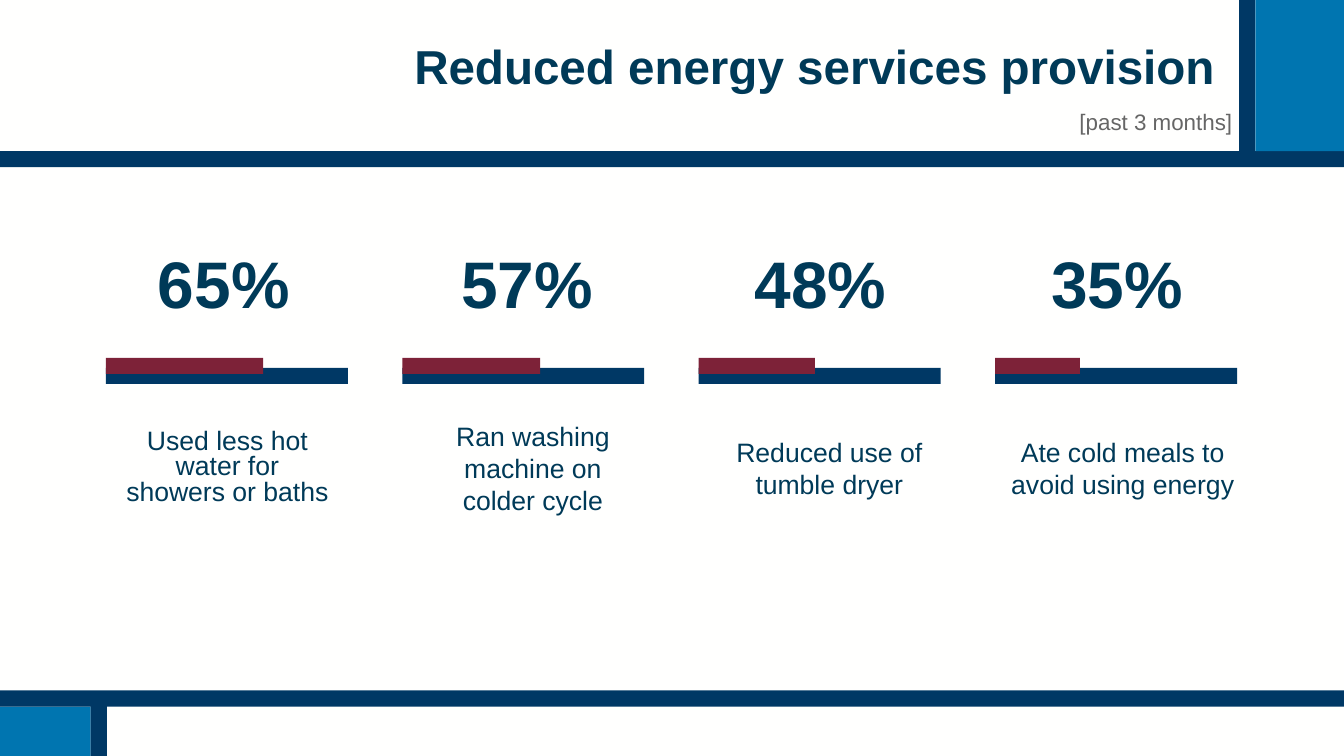
from pptx import Presentation
from pptx.dml.color import RGBColor
from pptx.enum.shapes import MSO_SHAPE
from pptx.enum.text import MSO_ANCHOR, PP_ALIGN
from pptx.util import Inches, Pt

WIDTH, HEIGHT = 13.33, 7.5
NAVY, BLUE, RED = "003865", "0075B0", "7D2238"
INK, GREY, PAPER = "003A58", "666666", "FFFFFE"
RULE = 0.16  # thickness of every band and bar


def color(value):
    return RGBColor.from_string(value)


class SlideBuilder:
    font = "Arial"

    def __init__(self, s):
        self.s = s

    def background(self, fill):
        bg = self.s.background.fill
        bg.solid()
        bg.fore_color.rgb = color(fill)

    def rect(self, x, y, w, h, fill):
        sp = self.s.shapes.add_shape(
            MSO_SHAPE.RECTANGLE, Inches(x), Inches(y), Inches(w), Inches(h))
        sp.shadow.inherit = False
        sp.fill.solid()
        sp.fill.fore_color.rgb = color(fill)
        sp.line.fill.background()

    def text(self, x, y, w, h, text, size, ink=INK, bold=False,
             align=PP_ALIGN.CENTER, spacing=1.0):
        sp = self.s.shapes.add_textbox(Inches(x), Inches(y), Inches(w), Inches(h))
        tf = sp.text_frame
        tf.word_wrap = True
        tf.vertical_anchor = MSO_ANCHOR.MIDDLE
        tf.text = text
        p = tf.paragraphs[0]
        p.alignment = align
        p.line_spacing = spacing
        font = p.runs[0].font
        font.name, font.size, font.bold = self.font, Pt(size), bold
        font.color.rgb = color(ink)


def add_frame(b):
    b.rect(0, 7.01, 0.9, HEIGHT - 7.01, BLUE)
    b.rect(0.9, 6.98, RULE, HEIGHT - 6.98, NAVY)
    for y in (1.5, 6.85):
        b.rect(0, y, WIDTH, RULE, NAVY)
    b.rect(12.45, 0, WIDTH - 12.45, 1.5, BLUE)
    b.rect(12.29, 0, RULE, 1.65, NAVY)


def add_statistics(b):
    # percent, its centre, label, label left, label width, label line spacing
    statistics = [
        (65, 2.22, "Used less hot water for showers or baths", 1.13, 2.25, 0.8),
        (57, 5.23, "Ran washing machine on colder cycle", 4.12, 2.33, 1.0),
        (48, 8.14, "Reduced use of tumble dryer", 7.1, 2.25, 1.0),
        (35, 11.08, "Ate cold meals to avoid using energy", 9.87, 2.53, 1.0),
    ]
    bar_left, pitch, bar_width = 1.05, 2.94, 2.4
    for i, (percent, centre, label, left, width, spacing) in enumerate(statistics):
        x = bar_left + i * pitch
        b.text(centre - 1.2, 1.98, 2.4, 1.73, f"{percent}%", 47,
               bold=True, spacing=0.9)
        b.rect(x, 3.65, bar_width, RULE, NAVY)
        b.rect(x, 3.55, bar_width * percent / 100, RULE, RED)
        b.text(left, 4.09, width, 1.11, label, 19, spacing=spacing)


def main():
    prs = Presentation()
    prs.slide_width, prs.slide_height = Inches(WIDTH), Inches(HEIGHT)
    b = SlideBuilder(prs.slides.add_slide(prs.slide_layouts[6]))
    b.background(PAPER)
    add_frame(b)
    b.text(1.21, 0.25, 10.94, 0.88, "Reduced energy services provision", 34,
           bold=True, align=PP_ALIGN.RIGHT, spacing=0.9)
    b.text(9.61, 0.97, 2.71, 0.47, "[past 3 months]", 16, GREY,
           align=PP_ALIGN.RIGHT)
    add_statistics(b)
    prs.save("out.pptx")


if __name__ == "__main__":
    main()
